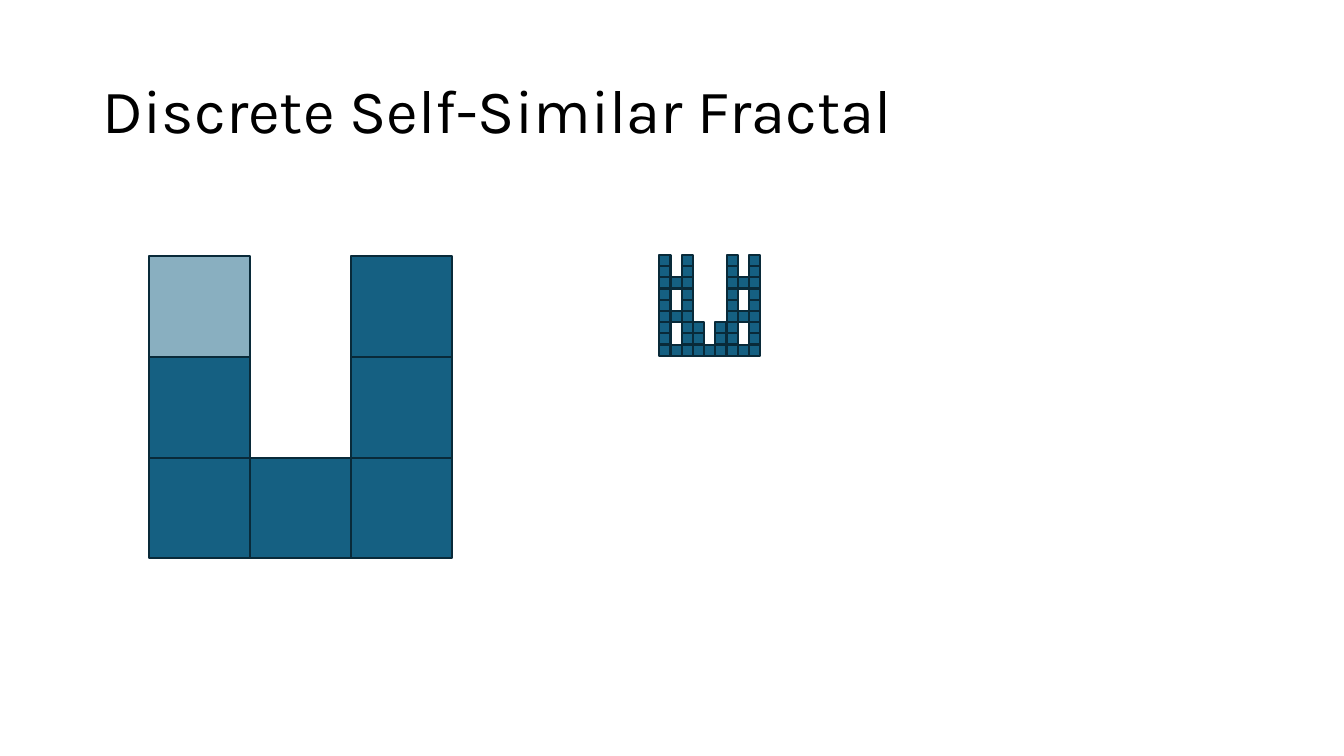
from dataclasses import dataclass

import lxml.etree
import pptx
import pptx.dml.color
import pptx.enum.shapes
import pptx.enum.text
import pptx.oxml.ns
import pptx.util

Inches = pptx.util.Inches


@dataclass(frozen=True)
class Theme:
    font: str = "Karla"
    title_size: int = 44
    title_color: str = "000000"
    tile_fill: str = "156082"
    tile_line: str = "092A39"
    tile_line_width: float = 1.5


THEME = Theme()

# Generator of the fractal as (column, row) cells, bottom row first
BASE = 3
GENERATOR = [(0, 2), (1, 2), (2, 2), (0, 1), (2, 1), (0, 0), (2, 0)]
FADED_CELL = (0, 0)


def rgb(value):
    return pptx.dml.color.RGBColor.from_string(value)


def next_stage(cells):
    """Replace every cell by a whole generator."""
    return [(BASE * col + sub_col, BASE * row + sub_row)
            for col, row in cells for sub_col, sub_row in GENERATOR]


def add_title(slide, wording):
    title = slide.shapes.title
    title.left, title.top = Inches(0.92), Inches(0.4)
    title.width, title.height = Inches(11.5), Inches(1.45)
    frame = title.text_frame
    frame.word_wrap = True
    frame.auto_size = pptx.enum.text.MSO_AUTO_SIZE.NONE
    frame.vertical_anchor = pptx.enum.text.MSO_ANCHOR.MIDDLE
    paragraph = frame.paragraphs[0]
    paragraph.alignment = pptx.enum.text.PP_ALIGN.LEFT
    paragraph.line_spacing = 0.9
    run = paragraph.add_run()
    run.text = wording
    run.font.name = THEME.font
    run.font.size = pptx.util.Pt(THEME.title_size)
    run.font.color.rgb = rgb(THEME.title_color)


def add_tile(shapes, left, top, side):
    tile = shapes.add_shape(pptx.enum.shapes.MSO_SHAPE.RECTANGLE,
                            Inches(left), Inches(top), Inches(side), Inches(side))
    tile.shadow.inherit = False
    tile.fill.solid()
    tile.fill.fore_color.rgb = rgb(THEME.tile_fill)
    tile.line.color.rgb = rgb(THEME.tile_line)
    tile.line.width = pptx.util.Pt(THEME.tile_line_width)
    return tile


def add_stage(shapes, cells, left, top, side):
    """Draw one stage of the fractal and return its tiles by cell."""
    return {(col, row): add_tile(shapes, left + col * side, top + row * side, side)
            for col, row in cells}


def set_opacity(tile, percent):
    color = tile.fill._xPr.find(".//" + pptx.oxml.ns.qn("a:srgbClr"))
    alpha = lxml.etree.SubElement(color, pptx.oxml.ns.qn("a:alpha"))
    alpha.set("val", str(percent * 1000))


def main():
    deck = pptx.Presentation()
    deck.slide_width, deck.slide_height = Inches(13.33), Inches(7.5)
    slide = deck.slides.add_slide(deck.slide_layouts[5])
    add_title(slide, "Discrete Self-Similar Fractal")

    # Second stage, shrunk to the size of one large tile
    small_stage = slide.shapes.add_group_shape()
    add_stage(small_stage.shapes, next_stage(GENERATOR), 6.54, 2.53, 1 / BASE ** 2)

    # First stage, with the tile to be replaced faded
    large_tiles = add_stage(slide.shapes, GENERATOR, 1.48, 2.54, 1)
    set_opacity(large_tiles[FADED_CELL], 50)

    deck.save("out.pptx")


if __name__ == "__main__":
    main()
